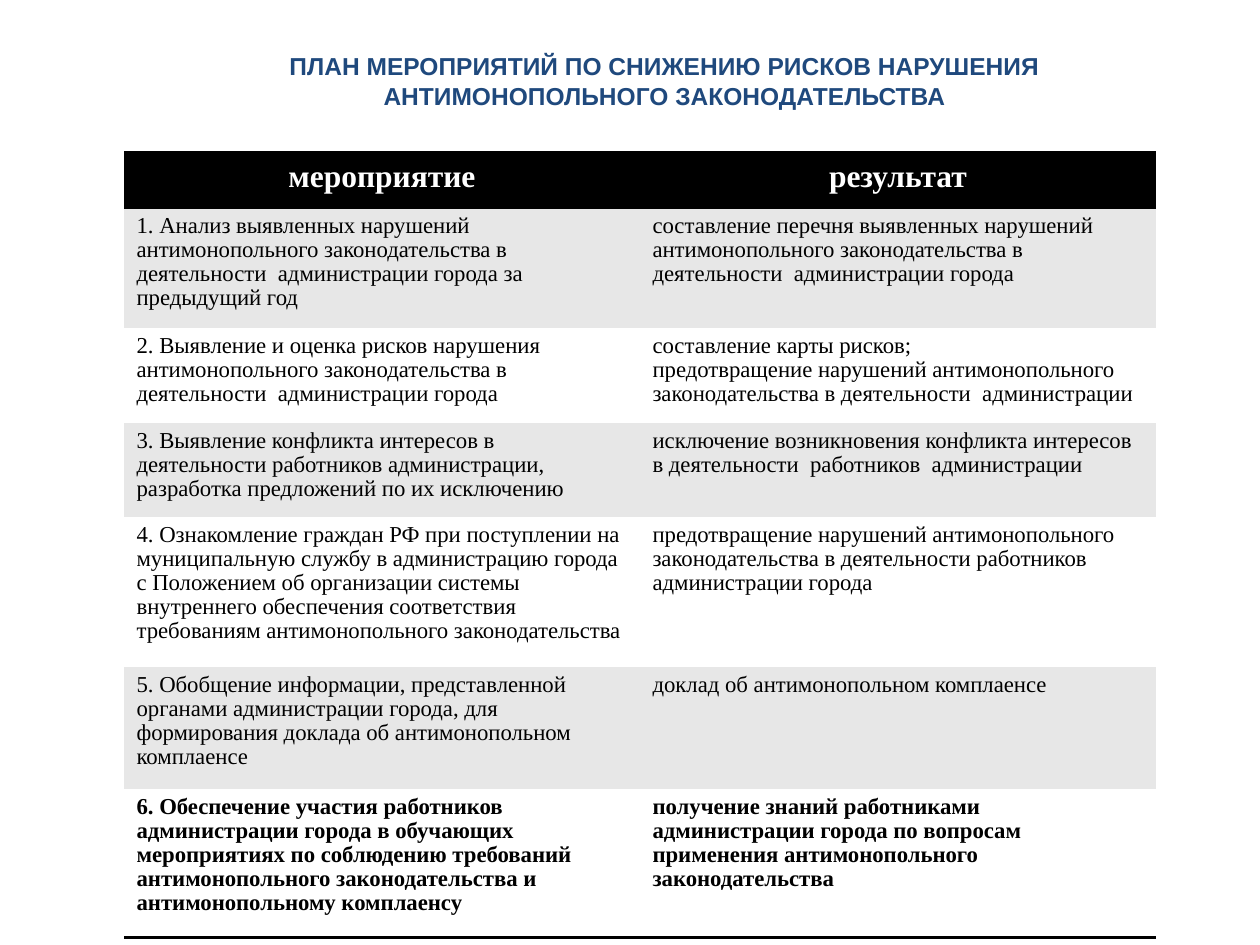
from dataclasses import dataclass

from lxml.etree import SubElement
from pptx import Presentation
from pptx.dml.color import RGBColor
from pptx.enum.text import MSO_ANCHOR as Anchor, MSO_AUTO_SIZE as AutoSize, PP_ALIGN as Align
from pptx.oxml.ns import qn
from pptx.util import Emu, Pt


@dataclass(frozen=True)
class Theme:
    title_font: str = "Arial"
    table_font: str = "Times New Roman"
    title_size: int = 14
    header_size: int = 18
    body_size: int = 13
    line_spacing: float = 0.96
    border_width: int = 2
    title_color: str = "1F497D"
    dark: str = "000000"
    light: str = "FFFFFF"
    band: str = "E7E7E7"


THEME = Theme()
PX_PER_INCH = 126
NO_STYLE_NO_GRID = "{2D5ABB26-0587-4C30-8999-92F81FD0307C}"
TITLE = "ПЛАН МЕРОПРИЯТИЙ ПО СНИЖЕНИЮ РИСКОВ НАРУШЕНИЯ АНТИМОНОПОЛЬНОГО ЗАКОНОДАТЕЛЬСТВА"
ROWS = [
    (55, "мероприятие", "результат"),
    (120, "1. Анализ выявленных нарушений антимонопольного законодательства в "
          "деятельности  администрации города за предыдущий год",
     "составление перечня выявленных нарушений антимонопольного законодательства в "
     "деятельности  администрации города"),
    (95, "2. Выявление и оценка рисков нарушения антимонопольного законодательства в "
         "деятельности  администрации города",
     "составление карты рисков;\nпредотвращение нарушений антимонопольного "
     "законодательства в деятельности  администрации"),
    (94, "3. Выявление конфликта интересов в деятельности работников администрации, "
         "разработка предложений по их исключению",
     "исключение возникновения конфликта интересов в деятельности  работников  администрации"),
    (150, "4. Ознакомление граждан РФ при поступлении на муниципальную службу в "
          "администрацию города с Положением об организации системы внутреннего "
          "обеспечения соответствия требованиям антимонопольного законодательства",
     "предотвращение нарушений антимонопольного законодательства в деятельности "
     "работников администрации города"),
    (122, "5. Обобщение информации, представленной органами администрации города, для "
          "формирования доклада об антимонопольном комплаенсе",
     "доклад об антимонопольном комплаенсе"),
    (149, "6. Обеспечение участия работников администрации города в обучающих "
          "мероприятиях по соблюдению требований антимонопольного законодательства и "
          "антимонопольному комплаенсу",
     "получение знаний работниками администрации города по вопросам применения "
     "антимонопольного законодательства"),
]


def px(length):
    return Emu(round(length * 914400 / PX_PER_INCH))


def format_text(text_frame, font_name, size, color, bold, align, spacing=1.0):
    for paragraph in text_frame.paragraphs:
        paragraph.alignment = align
        paragraph.line_spacing = spacing
        for run in paragraph.runs:
            run.font.name = font_name
            run.font.size = Pt(size)
            run.font.bold = bold
            run.font.color.rgb = RGBColor.from_string(color)


def add_borders(cell, sides):
    properties = cell._tc.get_or_add_tcPr()
    for index, side in enumerate(sides):
        line = properties.makeelement(qn(f"a:{side}"), {"w": str(Pt(THEME.border_width))})
        fill = SubElement(line, qn("a:solidFill"))
        SubElement(fill, qn("a:srgbClr"), val=THEME.dark)
        properties.insert(index, line)


def place_title(slide, left, top, width, height):
    title = slide.shapes.title
    title.left, title.top, title.width, title.height = map(px, (left, top, width, height))
    text_frame = title.text_frame
    text_frame.text = TITLE
    text_frame.word_wrap = True
    text_frame.auto_size = AutoSize.NONE
    text_frame.vertical_anchor = Anchor.TOP
    format_text(text_frame, THEME.title_font, THEME.title_size, THEME.title_color,
                True, Align.CENTER)


def fill_cell(cell, text, row_index):
    is_header = row_index == 0
    is_last = row_index == len(ROWS) - 1
    background = THEME.dark if is_header else THEME.band if row_index % 2 else THEME.light
    cell.text_frame.text = text
    cell.fill.solid()
    cell.fill.fore_color.rgb = RGBColor.from_string(background)
    if is_header:
        format_text(cell.text_frame, THEME.table_font, THEME.header_size, THEME.light,
                    True, Align.CENTER)
        add_borders(cell, ("lnT", "lnB"))
    else:
        format_text(cell.text_frame, THEME.table_font, THEME.body_size, THEME.dark,
                    is_last, Align.LEFT, THEME.line_spacing)
    if is_last:
        add_borders(cell, ("lnB",))


def add_plan_table(slide, left, top, width):
    height = sum(row[0] for row in ROWS)
    frame = slide.shapes.add_table(len(ROWS), 2, *map(px, (left, top, width, height)))
    table = frame.table
    table._tbl.tblPr.find(qn("a:tableStyleId")).text = NO_STYLE_NO_GRID
    for column in table.columns:
        column.width = px(width // 2)
    for row_index, (row_height, *texts) in enumerate(ROWS):
        table.rows[row_index].height = px(row_height)
        for column_index, text in enumerate(texts):
            fill_cell(table.cell(row_index, column_index), text, row_index)


def main():
    presentation = Presentation()
    presentation.slide_width, presentation.slide_height = px(1260), px(945)
    slide = presentation.slides.add_slide(presentation.slide_layouts[5])
    place_title(slide, 233, 45, 863, 97)
    add_plan_table(slide, 124, 153, 1032)
    presentation.save("out.pptx")


if __name__ == "__main__":
    main()
